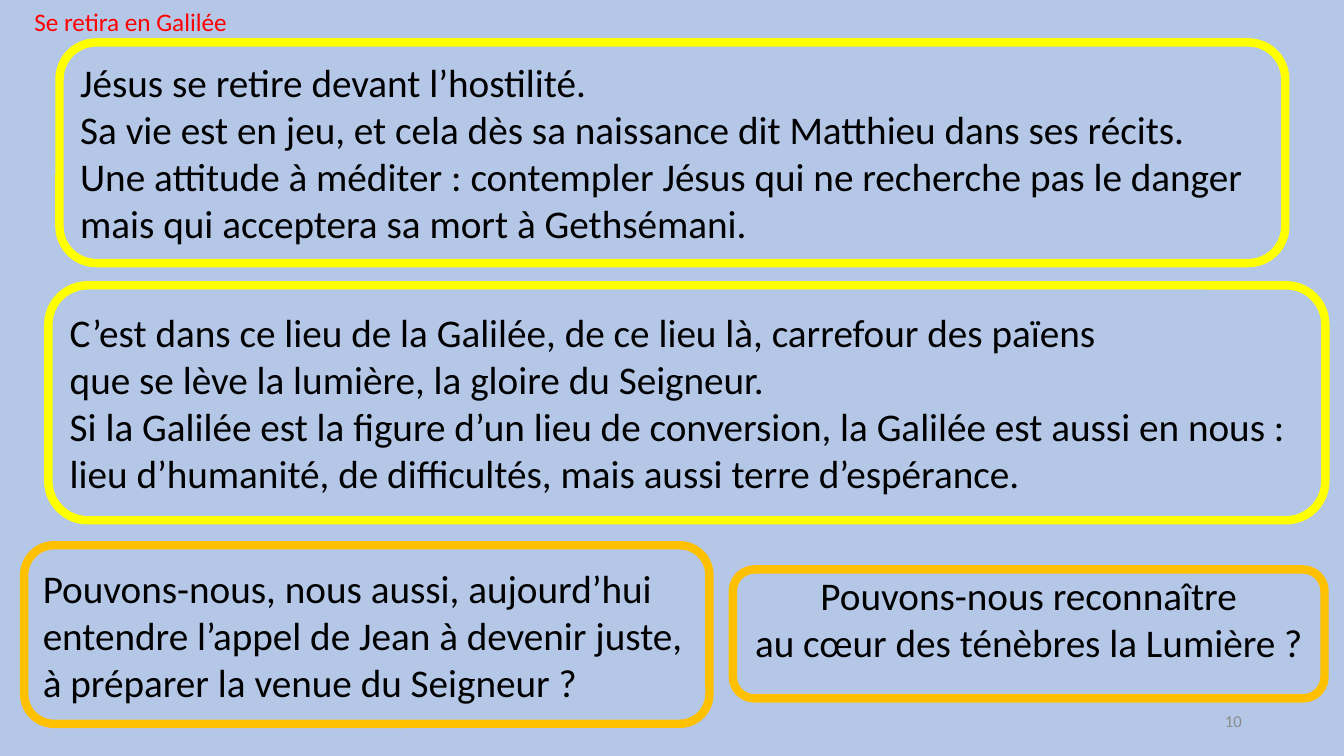
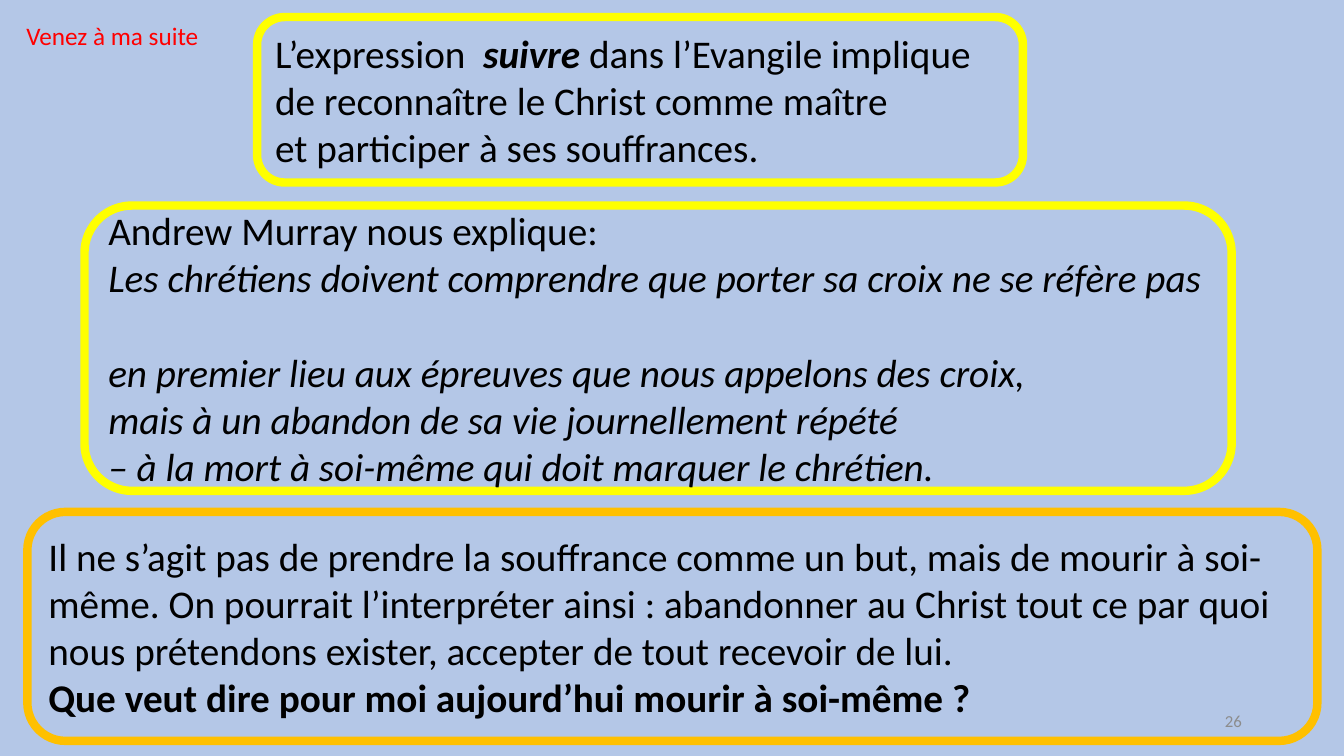
from pptx import Presentation
from pptx.dml.color import RGBColor
from pptx.enum.shapes import MSO_SHAPE
from pptx.enum.text import MSO_ANCHOR, MSO_AUTO_SIZE, PP_ALIGN
from pptx.util import Cm, Pt

FONT = "Calibri"
BACKGROUND, BLACK, RED, GREY = "B4C7E7", "000000", "FF0000", "8C8C8C"
COMMENT, QUESTION = "FFFF00", "FFC000"  # outline of each type of panel
TITLE_ONLY = 5
NUMBER_BOX = (23.93, 17.65, 7.62, 1.02)


def rgb(value):
    return RGBColor.from_string(value)


def style(paragraph, size, color, align=PP_ALIGN.LEFT, bold=False, italic=False):
    paragraph.alignment = align
    font = paragraph.font
    font.name, font.size = FONT, Pt(size)
    font.bold, font.italic = bold, italic
    font.color.rgb = rgb(color)


def write(paragraph, text):
    """Line ends become line breaks; words between asterisks are bold italic."""
    for row, line in enumerate(text.split("\n")):
        if row:
            paragraph.add_line_break()
        for index, words in enumerate(line.split("*")):
            run = paragraph.add_run()
            run.text = words
            if index % 2:
                run.font.bold = run.font.italic = True


def add_panel(slide, box, outline, paragraphs, bottom=0.13):
    """Rounded panel; each paragraph is (text, style options, space before)."""
    panel = slide.shapes.add_shape(MSO_SHAPE.ROUNDED_RECTANGLE, *map(Cm, box))
    panel.shadow.inherit = False
    panel.fill.background()
    panel.line.color.rgb = rgb(outline)
    panel.line.width = Pt(6)
    frame = panel.text_frame
    frame.word_wrap = True
    frame.vertical_anchor = MSO_ANCHOR.MIDDLE
    frame.margin_bottom = Cm(bottom)
    for index, (text, options, before) in enumerate(paragraphs):
        paragraph = frame.add_paragraph() if index else frame.paragraphs[0]
        style(paragraph, 28, BLACK, **options)
        paragraph.space_before = Pt(before)
        write(paragraph, text)


def set_title(slide, box, text):
    title = slide.shapes.title
    title.left, title.top, title.width, title.height = map(Cm, box)
    frame = title.text_frame
    frame.word_wrap = True
    frame.auto_size = MSO_AUTO_SIZE.NONE
    frame.vertical_anchor = MSO_ANCHOR.TOP
    frame.text = text
    style(frame.paragraphs[0], 18, RED)


def add_number(slide, number):
    frame = slide.shapes.add_textbox(*map(Cm, NUMBER_BOX)).text_frame
    frame.word_wrap = True
    frame.vertical_anchor = MSO_ANCHOR.MIDDLE
    frame.text = str(number)
    style(frame.paragraphs[0], 12, GREY, PP_ALIGN.RIGHT)


def add_meditation(prs, title, title_box, panels, number):
    slide = prs.slides.add_slide(prs.slide_layouts[TITLE_ONLY])
    set_title(slide, title_box, title)
    for panel in panels:
        add_panel(slide, *panel)
    add_number(slide, number)


PLAIN, CENTRED = {}, {"align": PP_ALIGN.CENTER}
ITALIC, BOLD = {"italic": True}, {"bold": True}

GALILEE = [
    ((1.5, 1.07, 30.89, 5.56), COMMENT, [
        ("Jésus se retire devant l’hostilité.", PLAIN, 0),
        ("Sa vie est en jeu, et cela dès sa naissance dit Matthieu dans ses récits.", PLAIN, 0),
        ("Une attitude à méditer : contempler Jésus qui ne recherche pas le danger\n"
         "mais qui acceptera sa mort à Gethsémani.", PLAIN, 0),
    ]),
    ((1.22, 7.19, 32.18, 5.92), COMMENT, [
        ("C’est dans ce lieu de la Galilée, de ce lieu là, carrefour des païens\n"
         "que se lève la lumière, la gloire du Seigneur.", PLAIN, 0),
        ("Si la Galilée est la figure d’un lieu de conversion, la Galilée est aussi en nous : "
         "lieu d’humanité, de difficultés, mais aussi terre d’espérance.", PLAIN, 0),
    ]),
    ((0.61, 13.74, 17.27, 4.5), QUESTION, [
        ("Pouvons-nous, nous aussi, aujourd’hui entendre l’appel de Jean à devenir juste, "
         "à préparer la venue du Seigneur ?", PLAIN, 0),
    ]),
    ((18.47, 14.35, 14.91, 3.25), QUESTION, [
        ("Pouvons-nous reconnaître", CENTRED, 0),
        ("au cœur des ténèbres la Lumière ?", CENTRED, 0),
    ], 0.9),
]

FOLLOW = [
    ((6.48, 0.43, 19.3, 4.17), COMMENT, [
        ("L’expression  *suivre* dans l’Evangile implique\n"
         "de reconnaître le Christ comme maître\n"
         "et participer à ses souffrances.", PLAIN, 0),
    ]),
    ((2.13, 5.18, 28.91, 7.19), COMMENT, [
        ("Andrew Murray nous explique:", PLAIN, 0),
        ("Les chrétiens doivent comprendre que porter sa croix ne se réfère pas", ITALIC, 0),
        ("en premier lieu aux épreuves que nous appelons des croix,\n"
         "mais à un abandon de sa vie journellement répété\n"
         "– à la mort à soi-même qui doit marquer le chrétien.", ITALIC, 34),
    ]),
    ((0.69, 12.9, 32.51, 5.77), QUESTION, [
        ("Il ne s’agit pas de prendre la souffrance comme un but, mais de mourir à soi-même. "
         "On pourrait l’interpréter ainsi : abandonner au Christ tout ce par quoi nous "
         "prétendons exister, accepter de tout recevoir de lui.", PLAIN, 0),
        ("Que veut dire pour moi aujourd’hui mourir à soi-même ?", BOLD, 0),
    ]),
]


def main():
    prs = Presentation()
    prs.slide_width, prs.slide_height = Cm(33.87), Cm(19.05)
    backdrop = prs.slide_master.background.fill
    backdrop.solid()
    backdrop.fore_color.rgb = rgb(BACKGROUND)
    add_meditation(prs, "Se retira en Galilée", (0.61, 0.03, 17.07, 1.02), GALILEE, 10)
    add_meditation(prs, "Venez à ma suite", (0.41, 0.38, 16.94, 1.02), FOLLOW, 26)
    prs.save("out.pptx")


if __name__ == "__main__":
    main()
